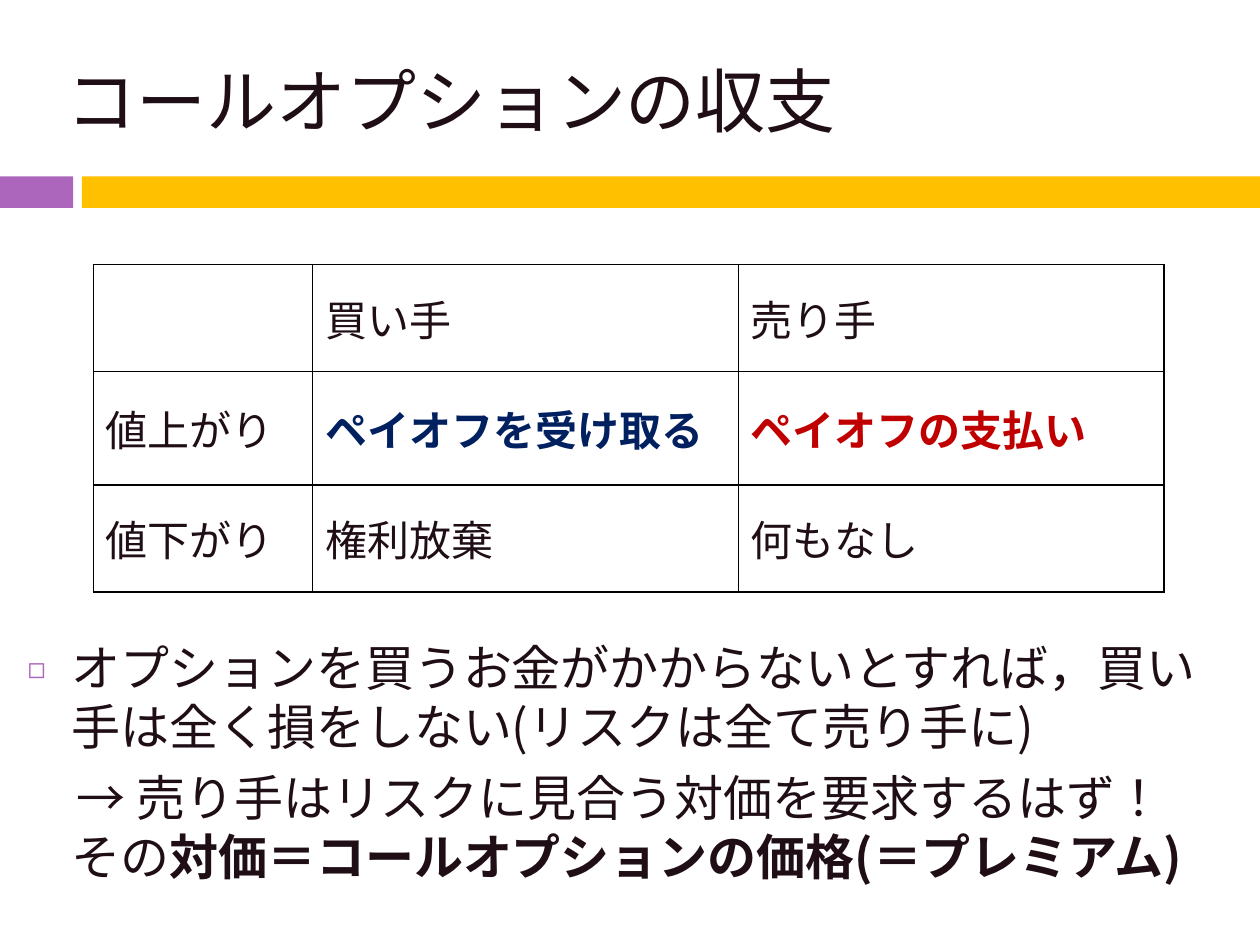
from lxml import etree
from pptx import Presentation
from pptx.dml.color import RGBColor
from pptx.enum import lang, shapes, text
from pptx.oxml.ns import qn
from pptx.util import Inches, Pt

INK = RGBColor(0x20, 0x0E, 0x17)
PURPLE = RGBColor(0xAC, 0x66, 0xBB)
GOLD = RGBColor(0xFF, 0xC0, 0x00)
NAVY = RGBColor(0x00, 0x20, 0x60)
RED = RGBColor(0xC0, 0x00, 0x00)
BLACK = RGBColor(0, 0, 0)
FONT = "Noto Sans CJK JP"

PAYOFFS = [
    ["", "買い手", "売り手"],
    ["値上がり", "ペイオフを受け取る", "ペイオフの支払い"],
    ["値下がり", "権利放棄", "何もなし"],
]
EMPHASIS = {(1, 1): NAVY, (1, 2): RED}


def add_span(para, words, size, color=INK, bold=False):
    span = para.add_run()
    span.text = words
    formats = {"name": FONT, "size": Pt(size), "bold": bold,
               "language_id": lang.MSO_LANGUAGE_ID.JAPANESE}
    for name, value in formats.items():
        setattr(span.font, name, value)
    span.font.color.rgb = color
    latin = span.font._element.find(qn("a:latin"))
    east_asian = etree.Element(qn("a:ea"), typeface=FONT)
    latin.addnext(east_asian)


def add_bar(page, left, width, color):
    bar = page.shapes.add_shape(
        shapes.MSO_SHAPE.RECTANGLE, Inches(left), Inches(1.4), Inches(width), Inches(0.25))
    bar.shadow.inherit = False
    bar.fill.solid()
    bar.fill.fore_color.rgb = color
    bar.line.fill.background()


def add_box(page, left, top, width, height, anchor):
    box = page.shapes.add_textbox(*map(Inches, (left, top, width, height)))
    formats = {"word_wrap": True, "auto_size": text.MSO_AUTO_SIZE.NONE,
               "vertical_anchor": anchor}
    for name, value in formats.items():
        setattr(box.text_frame, name, value)
    return box.text_frame


def add_borders(cell):
    properties = cell._tc.get_or_add_tcPr()
    for index, side in enumerate(("lnL", "lnR", "lnT", "lnB")):
        line = etree.Element(qn(f"a:{side}"), w=str(Pt(1)))
        fill = etree.SubElement(line, qn("a:solidFill"))
        etree.SubElement(fill, qn("a:srgbClr"), val=str(BLACK))
        properties.insert(index, line)


def add_payoff_table(page):
    frame = page.shapes.add_table(
        3, 3, Inches(0.74), Inches(2.1), Inches(8.5), Inches(2.6))
    table = frame.table
    for name in ("first_row", "horz_banding"):
        setattr(table, name, False)
    for column, width in zip(table.columns, (1.74, 3.38, 3.38)):
        column.width = Inches(width)
    for row, height in zip(table.rows, (0.85, 0.9, 0.85)):
        row.height = Inches(height)
    for r, labels in enumerate(PAYOFFS):
        for c, label in enumerate(labels):
            cell = table.cell(r, c)
            cell.fill.background()
            cell.vertical_anchor = text.MSO_ANCHOR.MIDDLE
            add_borders(cell)
            if label:
                color = EMPHASIS.get((r, c), INK)
                add_span(cell.text_frame.paragraphs[0], label, 24, color, (r, c) in EMPHASIS)


def format_hanging(para):
    para.space_before = Pt(7)
    properties = para._p.get_or_add_pPr()
    properties.set("marL", str(Inches(0.35)))
    properties.set("indent", str(Inches(-0.35)))
    return properties


def add_bullet(properties):
    color = etree.SubElement(properties, qn("a:buClr"))
    etree.SubElement(color, qn("a:srgbClr"), val=str(PURPLE))
    etree.SubElement(properties, qn("a:buSzPct"), val="60000")
    etree.SubElement(properties, qn("a:buFont"), typeface=FONT)
    etree.SubElement(properties, qn("a:buChar"), char="◻")


def add_explanation(page):
    frame = add_box(page, 0.12, 5.01, 9.72, 2.28, text.MSO_ANCHOR.TOP)
    premise = frame.paragraphs[0]
    add_bullet(format_hanging(premise))
    add_span(premise, "オプションを買うお金がかからないとすれば，買い手は全く損をしない"
                      "(リスクは全て売り手に)", 28)
    conclusion = frame.add_paragraph()
    etree.SubElement(format_hanging(conclusion), qn("a:buNone"))
    add_span(conclusion, "　→ 売り手はリスクに見合う対価を要求するはず！　その", 28)
    add_span(conclusion, "対価＝コールオプションの価格(＝プレミアム)", 28, bold=True)


def main():
    deck = Presentation()
    deck.slide_width, deck.slide_height = Inches(10), Inches(7.5)
    page = deck.slides.add_slide(deck.slide_layouts[6])
    add_bar(page, 0, 0.58, PURPLE)
    add_bar(page, 0.65, 9.35, GOLD)
    title = add_box(page, 0.43, 0.25, 9.15, 1.08, text.MSO_ANCHOR.MIDDLE)
    add_span(title.paragraphs[0], "コールオプションの収支", 40)
    add_payoff_table(page)
    add_explanation(page)
    deck.save("out.pptx")


if __name__ == "__main__":
    main()
